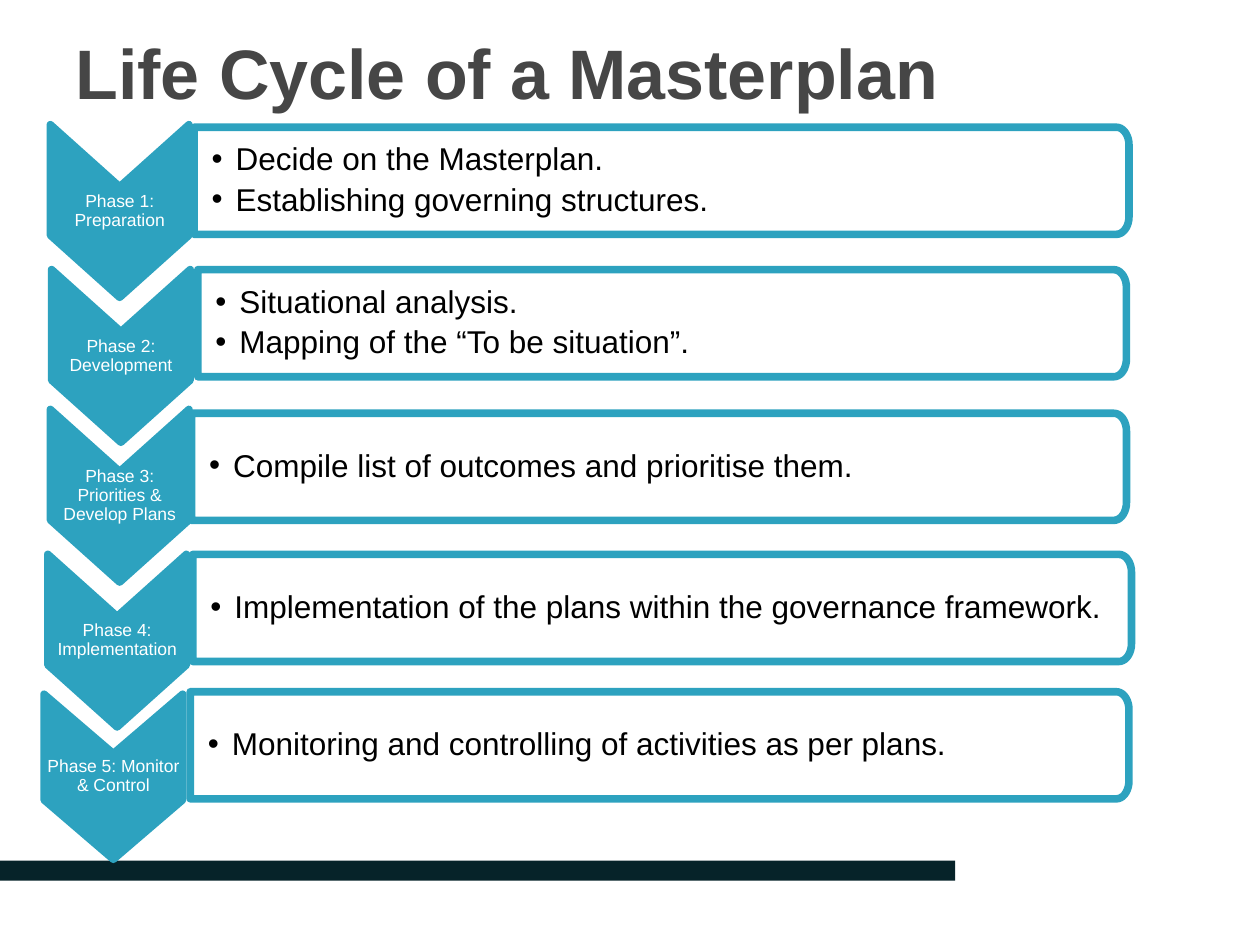
import math
from dataclasses import dataclass

from lxml import etree
from pptx import Presentation
from pptx.dml.color import RGBColor
from pptx.enum import shapes, text
from pptx.oxml import ns
from pptx.util import Inches, Pt


@dataclass(frozen=True)
class Theme:
    font: str = "Arial"
    accent: str = "2DA2BF"
    bar: str = "062329"
    title: str = "464646"
    body: str = "000000"
    white: str = "FFFFFF"
    title_size: float = 40
    body_size: float = 18
    phase_size: float = 10
    outline: float = 4.33


THEME = Theme()
CHEVRON_WIDTH = 1.1
PANEL_HEIGHT = 0.85
CORNER_WIDTH, CORNER_HEIGHT = 0.1, 0.14

# Each phase: label, chevron (left, top, height), panel (left, top, width), bullets
PHASES = [
    ("Phase 1: Preparation", (0.4, 0.99, 1.37), (1.54, 1.01, 7.42),
     ["Decide on the Masterplan.", "Establishing governing structures."]),
    ("Phase 2: Development", (0.41, 2.14, 1.37), (1.57, 2.14, 7.37),
     ["Situational analysis.", "Mapping of the “To be situation”."]),
    ("Phase 3: Priorities & Develop Plans", (0.4, 3.25, 1.37), (1.52, 3.28, 7.42),
     ["Compile list of outcomes and prioritise them."]),
    ("Phase 4: Implementation", (0.38, 4.4, 1.37), (1.53, 4.4, 7.45),
     ["Implementation of the plans within the governance framework."]),
    ("Phase 5: Monitor & Control", (0.35, 5.51, 1.31), (1.51, 5.49, 7.45),
     ["Monitoring and controlling of activities as per plans."]),
]


def add_element(parent, tag, **attributes):
    return etree.SubElement(parent, ns.qn(tag), **attributes)


def write_text(shape, lines, *, size, color, bold=False, align=text.PP_ALIGN.LEFT,
               insets=(0.1, 0.05, 0.1, 0.05), line_spacing=1.0, space_after=0, bullet=False):
    frame = shape.text_frame
    frame.word_wrap = True
    frame.vertical_anchor = text.MSO_ANCHOR.MIDDLE
    frame.margin_left, frame.margin_top, frame.margin_right, frame.margin_bottom = map(Inches, insets)
    for index, line in enumerate(lines):
        paragraph = frame.add_paragraph() if index else frame.paragraphs[0]
        paragraph.alignment = align
        paragraph.line_spacing = line_spacing
        paragraph.space_after = Pt(space_after)
        if bullet:
            properties = paragraph._p.get_or_add_pPr()
            properties.set("marL", str(Inches(0.19)))
            properties.set("indent", str(-Inches(0.19)))
            add_element(properties, "a:buFont", typeface=THEME.font)
            add_element(properties, "a:buChar", char="•")
        run = paragraph.add_run()
        run.text = line
        run.font.name = THEME.font
        run.font.size = Pt(size)
        run.font.bold = bold
        run.font.color.rgb = RGBColor.from_string(color)


def paint(shape, color):
    shape.shadow.inherit = False
    shape.fill.solid()
    shape.fill.fore_color.rgb = RGBColor.from_string(color)


def add_outline_shape(slide, points, fill):
    start, *others = [(Inches(x), Inches(y)) for x, y in points]
    builder = slide.shapes.build_freeform(*start)
    builder.add_line_segments(others, close=True)
    shape = builder.convert_to_shape()
    paint(shape, fill)
    shape.line.color.rgb = RGBColor.from_string(THEME.accent)
    shape.line.width = Pt(THEME.outline)
    add_element(shape._element.spPr.find(ns.qn("a:ln")), "a:round")
    return shape


def add_chevron(slide, label, left, top, height):
    right, middle = left + CHEVRON_WIDTH, left + CHEVRON_WIDTH / 2
    notch = height * 0.36
    bottom = top + height
    points = [(right, top), (right, bottom - notch), (middle, bottom),
              (left, bottom - notch), (left, top), (middle, top + notch)]
    shape = add_outline_shape(slide, points, THEME.accent)
    write_text(shape, [label], size=THEME.phase_size, color=THEME.white,
               align=text.PP_ALIGN.CENTER, insets=(0.01, 0.5, 0.01, 0.5), line_spacing=0.9)


def corner_points(center_x, center_y, first_angle):
    angles = [math.radians(first_angle + step * 10) for step in range(10)]
    return [(center_x + CORNER_WIDTH * math.cos(angle), center_y + CORNER_HEIGHT * math.sin(angle))
            for angle in angles]


def add_panel(slide, bullets, left, top, width):
    bottom = top + PANEL_HEIGHT
    center_x = left + width - CORNER_WIDTH
    points = [(left, top), *corner_points(center_x, top + CORNER_HEIGHT, -90),
              *corner_points(center_x, bottom - CORNER_HEIGHT, 0), (left, bottom)]
    shape = add_outline_shape(slide, points, THEME.white)
    fill_color = shape._element.spPr.find(ns.qn("a:solidFill"))[0]
    add_element(fill_color, "a:alpha", val="90000")
    write_text(shape, bullets, size=THEME.body_size, color=THEME.body, bullet=True,
               insets=(0.14, 0.04, 0.04, 0.04), line_spacing=0.9, space_after=3.5)


def add_bar(slide, left, top, width, height):
    bar = slide.shapes.add_shape(shapes.MSO_SHAPE.RECTANGLE, Inches(left), Inches(top),
                                 Inches(width), Inches(height))
    paint(bar, THEME.bar)
    bar.line.fill.background()


def add_title(slide, title):
    box = slide.shapes.add_textbox(Inches(0.5), Inches(0.3), Inches(9), Inches(0.54))
    write_text(box, [title], size=THEME.title_size, color=THEME.title, bold=True)


def main():
    presentation = Presentation()
    presentation.slide_width, presentation.slide_height = Inches(10), Inches(7.5)
    slide = presentation.slides.add_slide(presentation.slide_layouts[6])
    add_bar(slide, 0, 6.83, 7.58, 0.16)
    for label, chevron, panel, bullets in PHASES:
        add_chevron(slide, label, *chevron)
        add_panel(slide, bullets, *panel)
    add_title(slide, "Life Cycle of a Masterplan")
    presentation.save("out.pptx")


if __name__ == "__main__":
    main()
